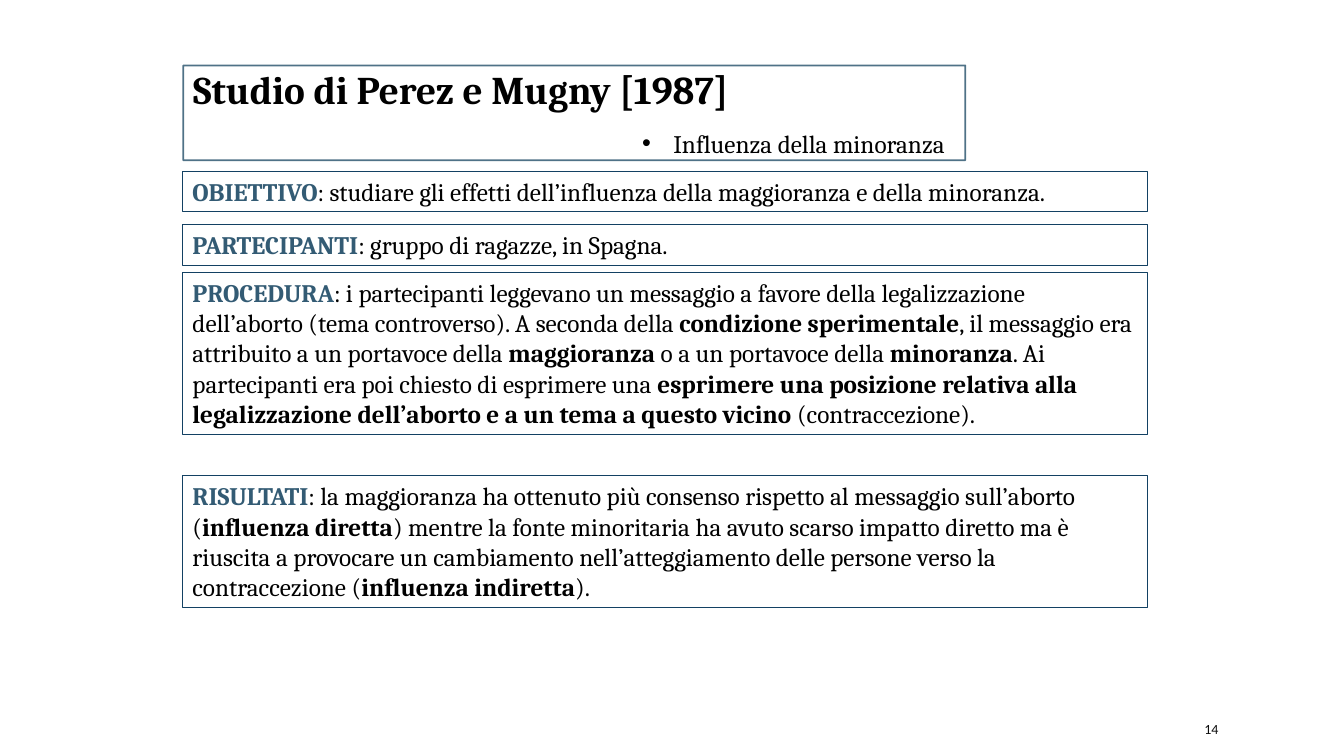
from dataclasses import dataclass

from lxml import etree
from pptx import Presentation
from pptx.dml.color import RGBColor
from pptx.enum import shapes, text
from pptx.oxml import ns
from pptx.util import Cm, Pt

TITLE = "Studio di Perez e Mugny [1987]"
TOPIC = "Influenza della minoranza"
NUMBER = "14"

# Label, top in cm, number of lines, text with *bold* parts
PANELS = [
    ("OBIETTIVO", 4.32, 1,
     ": studiare gli effetti dell’influenza della maggioranza e della minoranza."),
    ("PARTECIPANTI", 5.66, 1, ": gruppo di ragazze, in Spagna."),
    ("PROCEDURA", 6.86, 5,
     ": i partecipanti leggevano un messaggio a favore della legalizzazione "
     "dell’aborto (tema controverso). A seconda della *condizione sperimentale*, "
     "il messaggio era attribuito a un portavoce della *maggioranza* o a un "
     "portavoce della *minoranza*. Ai partecipanti era poi chiesto di esprimere "
     "una *esprimere una posizione relativa alla legalizzazione dell’aborto e a "
     "un tema a questo vicino* (contraccezione)."),
    ("RISULTATI", 11.99, 4,
     ": la maggioranza ha ottenuto più consenso rispetto al messaggio sull’aborto "
     "(*influenza diretta*) mentre la fonte minoritaria ha avuto scarso impatto "
     "diretto ma è riuscita a provocare un cambiamento nell’atteggiamento delle "
     "persone verso la contraccezione (*influenza indiretta*)."),
]


@dataclass(frozen=True)
class Theme:
    serif: str = "Cambria"
    sans: str = "Calibri"
    ink: str = "000000"
    grey: str = "0D0D0D"
    accent: str = "335B74"
    edge: str = "134163"
    title: int = 28
    body: int = 18
    small: int = 10


THEME = Theme()
LEFT, WIDTH = 4.6, 24.33
LINE, INSET = 0.77, 0.25


def add_run(para, words, size=THEME.body, color=THEME.ink, bold=False, face=THEME.serif):
    run = para.add_run()
    run.text = words
    font = run.font
    font.name, font.size, font.bold = face, Pt(size), bold
    font.color.rgb = RGBColor.from_string(color)


def add_frame(slide, box, color, weight):
    """Add an unfilled outlined rectangle with text set top left."""
    frame = slide.shapes.add_shape(shapes.MSO_SHAPE.RECTANGLE, *map(Cm, box))
    frame.shadow.inherit = False
    frame.fill.background()
    frame.line.color.rgb = RGBColor.from_string(color)
    frame.line.width = Pt(weight)
    body = frame.text_frame
    body.word_wrap = True
    body.vertical_anchor = text.MSO_ANCHOR.TOP
    body.paragraphs[0].alignment = text.PP_ALIGN.LEFT
    return frame


def add_title(slide):
    frame = add_frame(slide, (4.62, 1.65, 19.71, 2.39), THEME.accent, 1.25)
    tint = frame.line.fill._xPr.find(".//" + ns.qn("a:srgbClr"))
    etree.SubElement(tint, ns.qn("a:alpha"), val="86000")
    frame.text_frame.margin_top = 0
    add_run(frame.text_frame.paragraphs[0], TITLE, THEME.title, bold=True)


def add_topic(slide):
    box = slide.shapes.add_textbox(*map(Cm, (15.93, 2.72, 8.41, 1.42)))
    box.text_frame.word_wrap = False
    box.text_frame.auto_size = text.MSO_AUTO_SIZE.SHAPE_TO_FIT_TEXT
    para = box.text_frame.paragraphs[0]
    para.line_spacing = 1.5
    props = para._p.get_or_add_pPr()
    indent = Cm(0.79)
    props.set("marL", str(indent))
    props.set("indent", str(-indent))
    etree.SubElement(props, ns.qn("a:buFont"), typeface="Arial")
    etree.SubElement(props, ns.qn("a:buChar"), char="•")
    add_run(para, TOPIC)


def add_panel(slide, label, top, lines, words):
    frame = add_frame(slide, (LEFT, top, WIDTH, lines * LINE + INSET), THEME.edge, 0.75)
    frame.text_frame.auto_size = text.MSO_AUTO_SIZE.SHAPE_TO_FIT_TEXT
    para = frame.text_frame.paragraphs[0]
    add_run(para, label, color=THEME.accent, bold=True)
    for i, part in enumerate(words.split("*")):
        add_run(para, part, bold=i % 2 == 1)


def add_number(slide):
    box = slide.shapes.add_textbox(*map(Cm, (30.1, 17.98, 2.69, 0.76)))
    box.text_frame.word_wrap = True
    box.text_frame.vertical_anchor = text.MSO_ANCHOR.MIDDLE
    add_run(box.text_frame.paragraphs[0], NUMBER, THEME.small, THEME.grey, face=THEME.sans)


def main():
    deck = Presentation()
    deck.slide_width, deck.slide_height = Cm(33.87), Cm(19.05)
    slide = deck.slides.add_slide(deck.slide_layouts[6])
    add_title(slide)
    add_topic(slide)
    for panel in PANELS:
        add_panel(slide, *panel)
    add_number(slide)
    deck.save("out.pptx")


if __name__ == "__main__":
    main()
